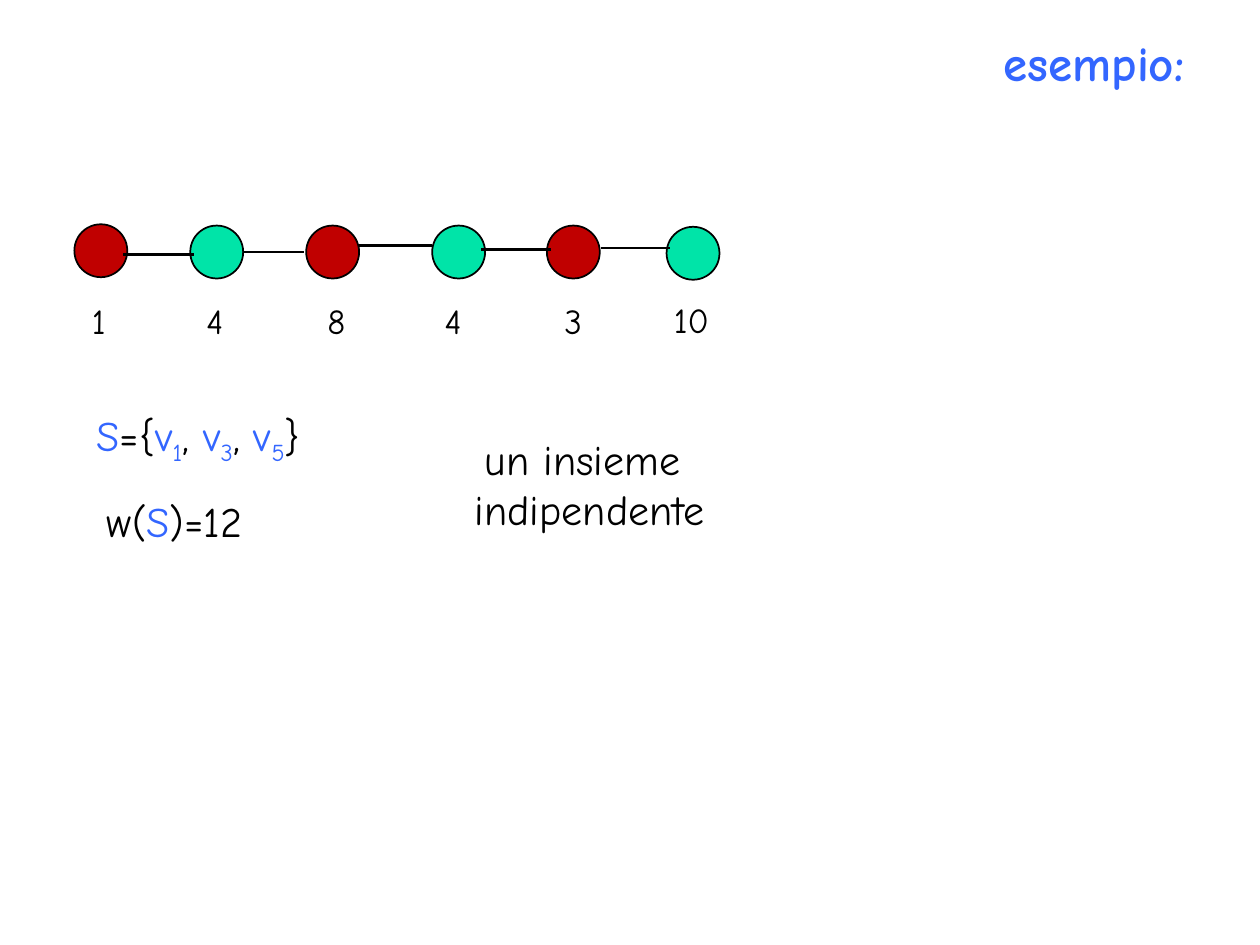
import pptx
import pptx.util
import pptx.dml.color
import pptx.enum.shapes
import pptx.enum.text
import pptx.oxml.ns
import lxml.etree

Inch, Pt = pptx.util.Inches, pptx.util.Pt
RGB = pptx.dml.color.RGBColor.from_string
ALIGN = pptx.enum.text.PP_ALIGN

theme = {
    "font": "Comic Neue",
    "ink": "000000", "blue": "3366FF", "red": "C00000", "green": "00E4A8",
    "title": 28, "body": 24, "label": 20,
}


def style(run, size, tint="ink", sub=False):
    font = run.font
    font.name, font.size = theme["font"], Pt(theme[size])
    font.color.rgb = RGB(theme[tint])
    if sub:
        run._r.get_or_add_rPr().set("baseline", "-25000")


def write(box, lines, size, align=ALIGN.LEFT):
    """Add a text box; each line is a list of (text, tint, subscript) parts."""
    frame = slide.shapes.add_textbox(*map(Inch, box)).text_frame
    frame.word_wrap = True
    for num, parts in enumerate(lines):
        para = frame.add_paragraph() if num else frame.paragraphs[0]
        para.alignment = align
        for text, *look in parts:
            run = para.add_run()
            run.text = text
            style(run, size, *look)


deck = pptx.Presentation()
deck.slide_width, deck.slide_height = Inch(10), Inch(7.5)
slide = deck.slides.add_slide(deck.slide_layouts[5])

# Title
title = slide.shapes.title
title.left, title.top, title.width, title.height = map(Inch, (0.5, 0.21, 9, 1))
title.text_frame.text = "esempio:"
title.text_frame.vertical_anchor = pptx.enum.text.MSO_ANCHOR.TOP
para = title.text_frame.paragraphs[0]
para.alignment = ALIGN.RIGHT
para.space_before = Pt(0.2 * theme["title"])
style(para.runs[0], "title", "blue")
para.runs[0].font.bold = True

# Path nodes: left, top, weight, label left, label top, label width
size = 0.42
nodes = [
    (0.59, 1.78, "1", 0.63, 2.33, 0.31),
    (1.51, 1.79, "4", 1.54, 2.33, 0.31),
    (2.43, 1.79, "8", 2.5, 2.33, 0.31),
    (3.43, 1.79, "4", 3.43, 2.33, 0.31),
    (4.34, 1.79, "3", 4.38, 2.33, 0.31),
    (5.29, 1.8, "10", 5.25, 2.32, 0.69),
]
oval = pptx.enum.shapes.MSO_SHAPE.OVAL
for num, (left, top, weight, *place, wide) in enumerate(nodes):
    node = slide.shapes.add_shape(oval, *map(Inch, (left, top, size, size)))
    node.shadow.inherit = False
    node.fill.solid()
    node.fill.fore_color.rgb = RGB(theme["green" if num % 2 else "red"])
    node.line.color.rgb = RGB(theme["ink"])
    node.line.width = Pt(1)
    write((*place, wide, 0.44), [[(weight,)]], "label")

# Path edges: start, end, height
edges = [(0.98, 1.54, 2.02), (1.94, 2.41, 2), (2.84, 3.43, 1.95),
         (3.82, 4.37, 1.98), (4.77, 5.32, 1.97)]
straight = pptx.enum.shapes.MSO_CONNECTOR.STRAIGHT
for start, end, y in edges:
    edge = slide.shapes.add_connector(straight, *map(Inch, (start, y, end, y)))
    edge.line.color.rgb = RGB(theme["ink"])
    edge.line.width = Pt(1.5)
    lxml.etree.SubElement(edge._element.spPr, pptx.oxml.ns.qn("a:effectLst"))

# Chosen set, its weight and the remark
chosen = [("S", "blue"), ("={",),
          ("v", "blue"), ("1", "blue", True), (",",),
          (" v", "blue"), ("3", "blue", True), (", ",),
          ("v", "blue"), ("5", "blue", True), ("}",)]
write((0.67, 3.2, 3.62, 0.5), [chosen], "body")
write((0.75, 3.88, 2.28, 0.5), [[("w(",), ("S", "blue"), (")=12",)]], "body")
write((3.58, 3.39, 2.2, 0.91), [[("un insieme ",)], [("indipendente",)]],
      "body", ALIGN.CENTER)

deck.save("out.pptx")
